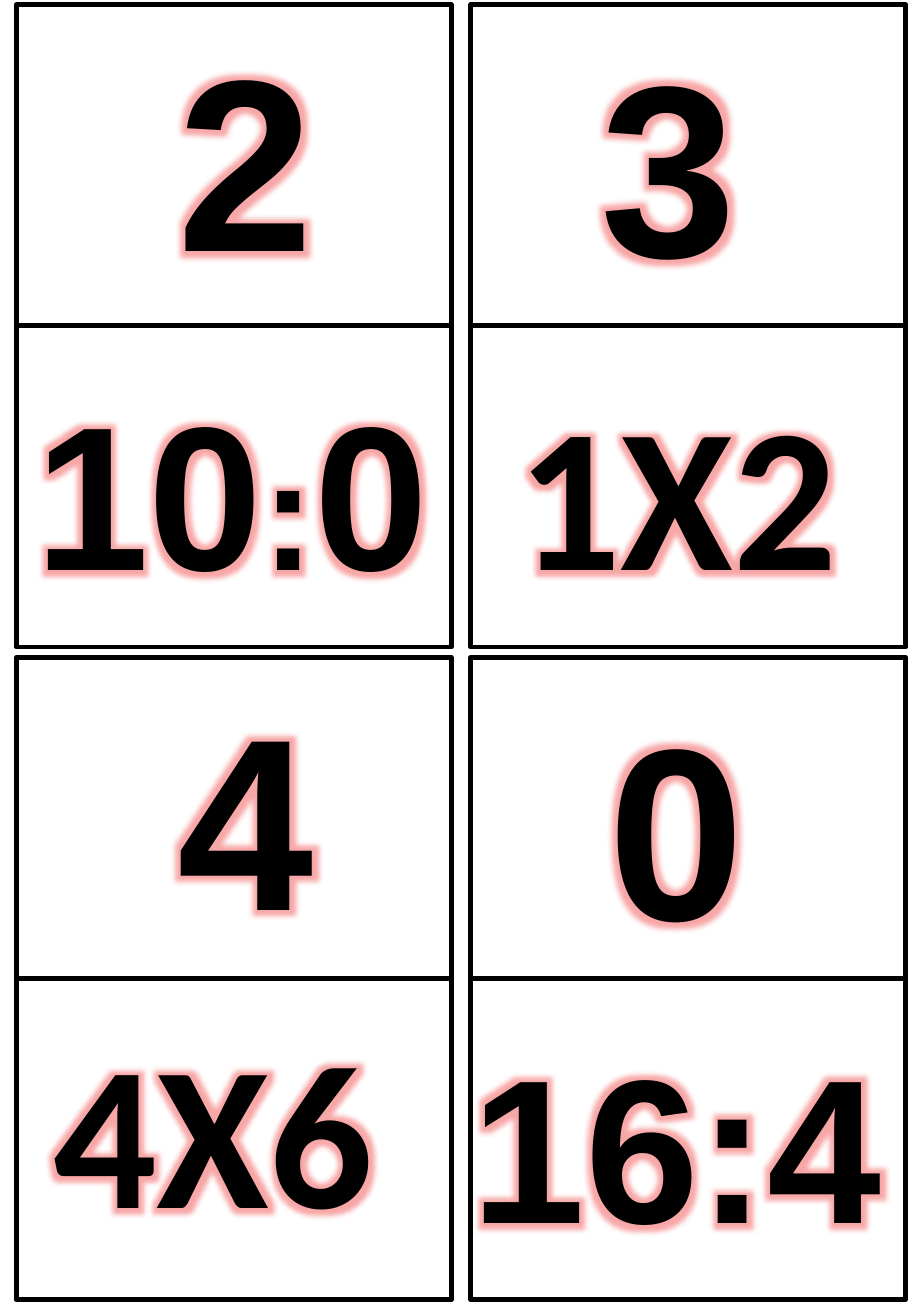
from lxml.etree import SubElement
from pptx import Presentation
from pptx.dml.color import RGBColor
from pptx.enum.shapes import MSO_CONNECTOR, MSO_SHAPE
from pptx.enum.text import MSO_AUTO_SIZE, PP_ALIGN
from pptx.oxml.ns import qn
from pptx.util import Pt

PX = 9144
WIDE, HIGH = 378, 558
BIG, MID, LOW = 153, 128, 98
CARDS = [
    (14, 4, (0, 0, [("2", BIG)]),
     (-12, 312, [("10", MID), (":", LOW), ("0", MID)])),
    (409, 4, (367, 5, [("3", BIG)]), (375, 312, [("1X2", MID)])),
    (14, 571, (0, 572, [("4", BIG)]), (-28, 866, [("4X6", MID)])),
    (409, 571, (374, 581, [("0", BIG)]), (374, 879, [("16:4", MID)])),
]


def hue(code):
    """Turn a hex string into a colour."""
    return RGBColor.from_string(code)


def px(*sizes):
    """Turn px lengths into EMU."""
    return [size * PX for size in sizes]


def pen(line):
    """Give a line the card's black stroke."""
    line.color.rgb = hue("000000")
    line.width = Pt(3)


def glow(run):
    """Put a soft red glow around a run."""
    props = run.font._element
    font = props.find(qn("a:latin"))
    fx = SubElement(props, qn("a:effectLst"))
    font.addprevious(fx)
    halo = SubElement(fx, qn("a:glow"), rad="101600")
    tint = SubElement(halo, qn("a:srgbClr"), val="F03C3C")
    SubElement(tint, qn("a:alpha"), val="45000")
    SubElement(props, qn("a:cs"), typeface="Arial")


def label(slide, left, top, parts, high):
    """Write one large right-to-left text, centred in its box."""
    box = slide.shapes.add_textbox(*px(left, top, 427, high))
    frame = box.text_frame
    frame.word_wrap = True
    frame.auto_size = MSO_AUTO_SIZE.SHAPE_TO_FIT_TEXT
    frame.margin_left, frame.margin_right = px(11, 11)
    frame.margin_top, frame.margin_bottom = px(6, 6)
    para = frame.paragraphs[0]
    para.alignment = PP_ALIGN.CENTER
    para._p.get_or_add_pPr().set("rtl", "1")
    for text, size in parts:
        run = para.add_run()
        run.text = text
        run.font.size = Pt(size)
        run.font.bold = True
        run.font.name = "Calibri"
        run.font.color.rgb = hue("000000")
        glow(run)


def card(slide, left, top, head, task):
    """Draw a card split in two, a number above and a sum below."""
    box = slide.shapes.add_shape(
        MSO_SHAPE.RECTANGLE, *px(left, top, WIDE, HIGH))
    box.shadow.inherit = False
    box.fill.solid()
    box.fill.fore_color.rgb = hue("FFFFFF")
    pen(box.line)
    mid = top + HIGH // 2
    rule = slide.shapes.add_connector(
        MSO_CONNECTOR.STRAIGHT, *px(left, mid, left + WIDE, mid))
    rule.begin_connect(box, 1)
    rule.end_connect(box, 3)
    pen(rule.line)
    SubElement(rule._element.spPr, qn("a:effectLst"))
    label(slide, *head, 277)
    label(slide, *task, 233)


def main():
    """Build the sheet of four cards."""
    deck = Presentation()
    deck.slide_width, deck.slide_height = px(801, 1143)
    slide = deck.slides.add_slide(deck.slide_layouts[6])
    for item in CARDS:
        card(slide, *item)
    deck.save("out.pptx")


if __name__ == "__main__":
    main()
